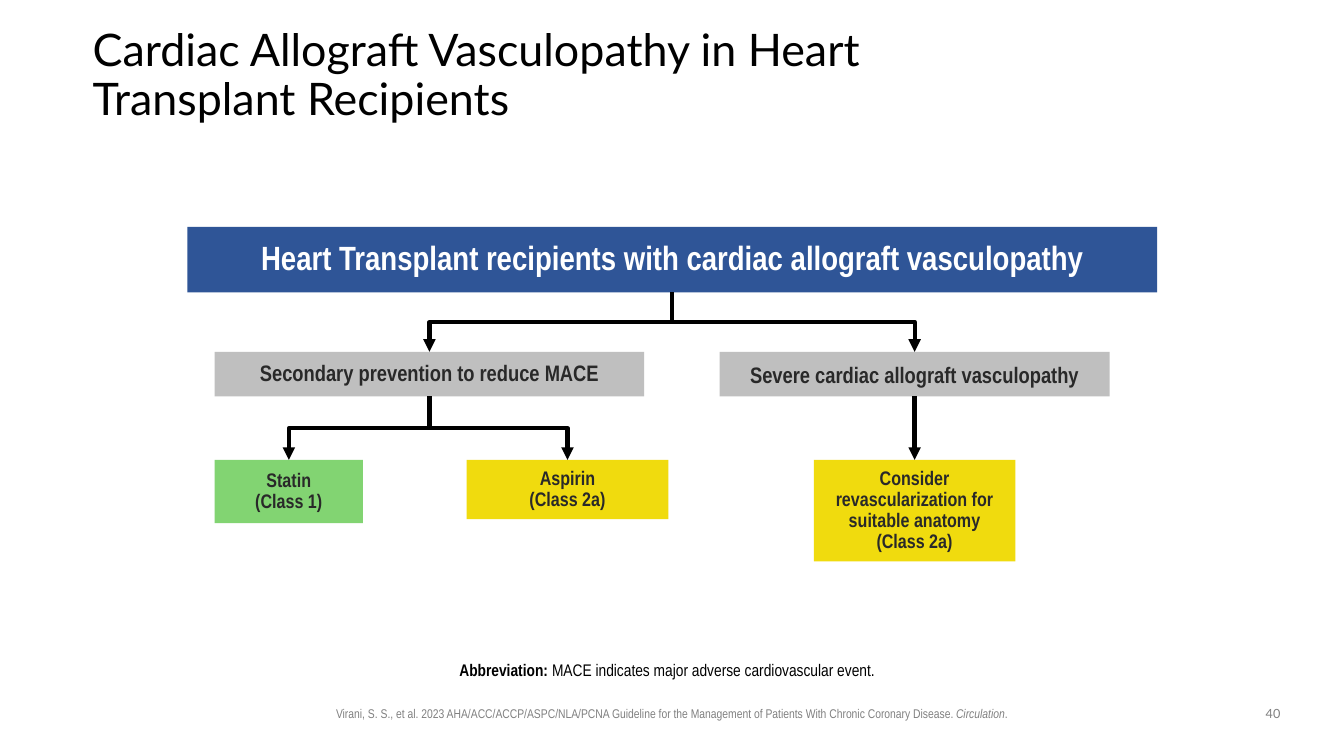
from pptx import Presentation
from pptx.dml.color import RGBColor
from pptx.enum.shapes import MSO_CONNECTOR, MSO_SHAPE
from pptx.enum.text import MSO_ANCHOR, MSO_AUTO_SIZE, PP_ALIGN
from pptx.oxml.ns import qn
from pptx.util import Pt
from lxml import etree

CENTER, LEFT = PP_ALIGN.CENTER, PP_ALIGN.LEFT
MIDDLE, TOP = MSO_ANCHOR.MIDDLE, MSO_ANCHOR.TOP
ELBOW, STRAIGHT = MSO_CONNECTOR.ELBOW, MSO_CONNECTOR.STRAIGHT
BOTTOM_SIDE, TOP_SIDE = 2, 0

COLORS = {
    "black": "000000", "white": "FFFFFF", "ink": "292929", "muted": "808080",
    "blue": "2F5597", "gray": "BFBFBF", "green": "82D472", "yellow": "F0DB0E",
}
NARROW, LATO = "Arial Narrow", "Lato"
INSETS = (7.2, 3.6, 7.2, 3.6)
NO_INSETS = (0, 0, 0, 0)


def rgb(name):
    return RGBColor.from_string(COLORS[name])


class FlowSlide:
    def __init__(self, presentation):
        self.slide = presentation.slides.add_slide(presentation.slide_layouts[1])

    def set_text(self, shape, paragraphs, size, color, font=NARROW, bold=None,
                 align=CENTER, anchor=MIDDLE, insets=INSETS, spacing=0.9):
        """Fill a shape; each paragraph is a list of (text, run style) pairs."""
        frame = shape.text_frame
        frame.word_wrap = True
        frame.auto_size = MSO_AUTO_SIZE.NONE
        frame.vertical_anchor = anchor
        (frame.margin_left, frame.margin_top,
         frame.margin_right, frame.margin_bottom) = map(Pt, insets)
        for index, runs in enumerate(paragraphs):
            paragraph = frame.add_paragraph() if index else frame.paragraphs[0]
            paragraph.alignment = align
            paragraph.line_spacing = spacing
            paragraph.space_before = Pt(0)
            if shape.is_placeholder:
                properties = paragraph._p.get_or_add_pPr()
                properties.set("marL", "0")
                properties.set("indent", "0")
                etree.SubElement(properties, qn("a:buNone"))
            paragraph.font.name = font
            paragraph.font.size = Pt(size)
            paragraph.font.bold = bold
            paragraph.font.color.rgb = rgb(color)
            for text, style in runs:
                run = paragraph.add_run()
                run.text = text
                if style == "bold":
                    run.font.bold = True
                elif style == "italic":
                    run.font.italic = True

    def placeholder(self, index, bounds, paragraphs, size, **style):
        shape = self.slide.placeholders[index]
        shape.left, shape.top, shape.width, shape.height = map(Pt, bounds)
        self.set_text(shape, paragraphs, size, "black", **style)

    def text(self, bounds, paragraphs, size, color, font):
        shape = self.slide.shapes.add_textbox(*map(Pt, bounds))
        self.set_text(shape, paragraphs, size, color, font, anchor=TOP, spacing=1)

    def box(self, bounds, lines, fill, size, color="ink", **style):
        shape = self.slide.shapes.add_shape(MSO_SHAPE.RECTANGLE, *map(Pt, bounds))
        shape.shadow.inherit = False
        shape.fill.solid()
        shape.fill.fore_color.rgb = rgb(fill)
        shape.line.fill.background()
        self.set_text(shape, [[(line, None)] for line in lines], size, color,
                      bold=True, **style)
        return shape

    def arrow(self, parent, child, kind=ELBOW):
        connector = self.slide.shapes.add_connector(kind, 0, 0, 0, 0)
        connector.begin_connect(parent, BOTTOM_SIDE)
        connector.end_connect(child, TOP_SIDE)
        if kind == ELBOW:
            self.turn_downward(connector)
        connector.line.width = Pt(3)
        connector.line.color.rgb = rgb("black")
        outline = connector._element.spPr.find(qn("a:ln"))
        etree.SubElement(outline, qn("a:tailEnd"), type="triangle")
        etree.SubElement(connector._element.spPr, qn("a:effectLst"))

    def turn_downward(self, connector):
        """Rotate an elbow so that it leaves and arrives vertically."""
        start_x, start_y = connector.begin_x, connector.begin_y
        end_x, end_y = connector.end_x, connector.end_y
        drop, reach = end_y - start_y, abs(end_x - start_x)
        connector.width, connector.height = drop, reach
        connector.left = (start_x + end_x - drop) // 2
        connector.top = (start_y + end_y - reach) // 2
        transform = connector._element.spPr.find(qn("a:xfrm"))
        goes_right = end_x > start_x
        transform.set("rot", "16200000" if goes_right else "5400000")
        transform.set("flipH", "1" if goes_right else "0")


def main():
    presentation = Presentation()
    presentation.slide_width, presentation.slide_height = Pt(960), Pt(540)
    flow = FlowSlide(presentation)

    flow.placeholder(
        0, (66.2, 28.8, 625.7, 51.8),
        [[("Cardiac Allograft Vasculopathy in Heart Transplant Recipients", None)]],
        32, font=LATO, align=LEFT, insets=NO_INSETS)
    flow.placeholder(
        1, (230.4, 469.4, 499.7, 30.2),
        [[("Abbreviation: ", "bold"),
          ("MACE indicates major adverse cardiovascular event.", None)]],
        12, anchor=TOP, insets=(0, 3.6, 7.2, 3.6))
    flow.text(
        (211.7, 500.4, 536.4, 18),
        [[("Virani, S. S., et al. 2023 AHA/ACC/ACCP/ASPC/NLA/PCNA Guideline for "
           "the Management of Patients With Chronic Coronary Disease. ", None),
          ("Circulation", "italic"), (".", None)]], 9, "muted", NARROW)
    flow.text((894.2, 500.4, 30.2, 18.7), [[("40", None)]], 9, "muted", LATO)

    branch_top, branch_height, leaf_top = 251.3, 31.9, 328.5
    recipients = flow.box(
        (133.9, 162, 692.6, 46.8),
        ["Heart Transplant recipients with cardiac allograft vasculopathy"],
        "blue", 24, "white", insets=NO_INSETS)
    prevention = flow.box((153.4, branch_top, 306.7, branch_height),
                          ["Secondary prevention to reduce MACE"], "gray", 16)
    severe = flow.box((514, branch_top, 278.6, branch_height),
                      ["Severe cardiac allograft vasculopathy"], "gray", 16,
                      spacing=1)
    statin = flow.box((153.4, leaf_top, 105.8, 45.2),
                      ["Statin", "(Class 1)"], "green", 14)
    aspirin = flow.box((333.4, leaf_top, 144, 42.3),
                       ["Aspirin", "(Class 2a)"], "yellow", 14)
    revascularization = flow.box(
        (581.3, leaf_top, 144, 72.5),
        ["Consider revascularization for suitable anatomy", "(Class 2a)"],
        "yellow", 14)

    for parent, child in ((recipients, prevention), (recipients, severe),
                          (prevention, statin), (prevention, aspirin)):
        flow.arrow(parent, child)
    flow.arrow(severe, revascularization, STRAIGHT)

    presentation.save("out.pptx")


if __name__ == "__main__":
    main()
